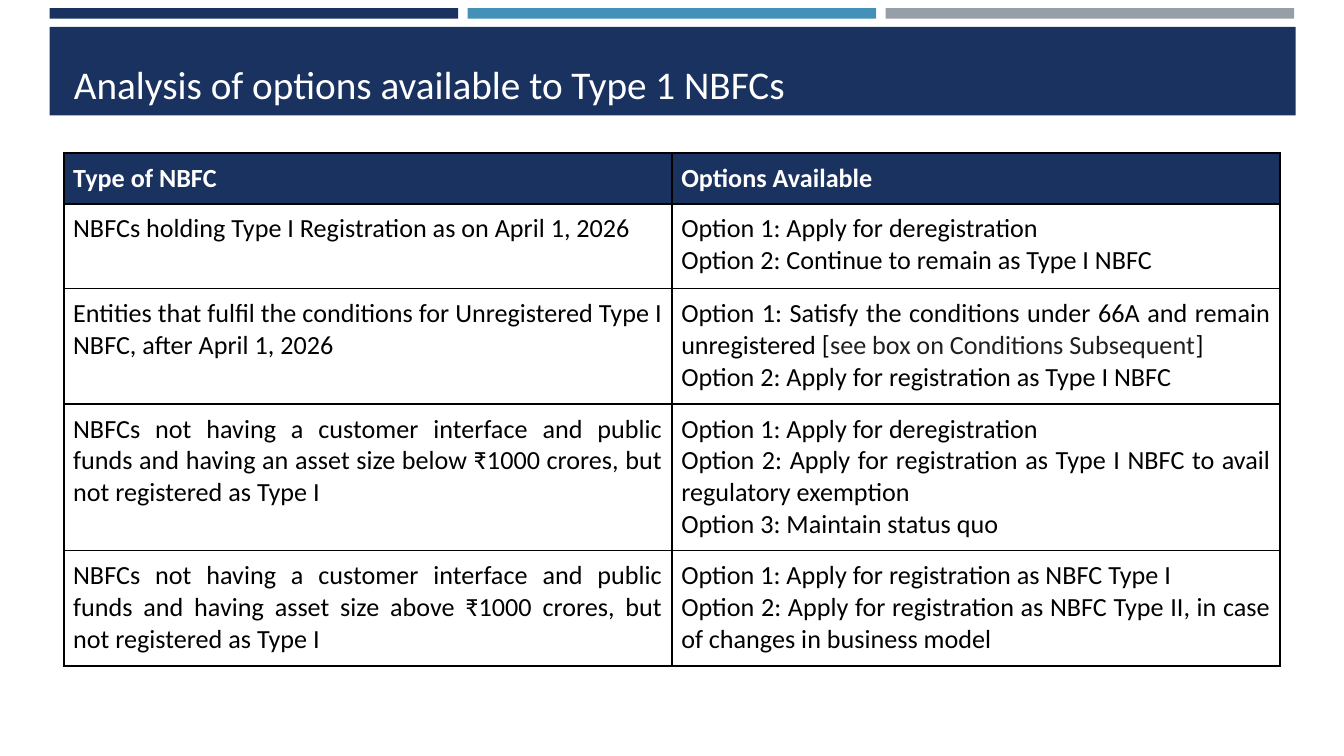
from dataclasses import dataclass

from lxml import etree
from pptx import Presentation
from pptx.dml.color import RGBColor
from pptx.enum.shapes import MSO_SHAPE
from pptx.enum.text import MSO_ANCHOR, PP_ALIGN
from pptx.oxml.ns import qn
from pptx.util import Inches, Pt

RECT = MSO_SHAPE.RECTANGLE
BOTTOM = MSO_ANCHOR.BOTTOM
TOP = MSO_ANCHOR.TOP
JUSTIFY = PP_ALIGN.JUSTIFY
LEFT = PP_ALIGN.LEFT


@dataclass(frozen=True)
class Theme:
    """Colours, font and type sizes of the slide."""
    navy: str = "1A3260"
    blue: str = "4590B8"
    grey: str = "969FA7"
    white: str = "FFFFFF"
    black: str = "000000"
    soft: str = "1F1F1F"
    font: str = "Calibri"
    title: int = 21
    body: int = 14
    border: int = 1
    inset: int = 5


THEME = Theme()
HEADS = ["Type of NBFC", "Options Available"]
ROWS = [
    (["NBFCs holding Type I Registration as on April 1, 2026"],
     ["Option 1: Apply for deregistration",
      "Option 2: Continue to remain as Type I NBFC"]),
    (["Entities that fulfil the conditions for Unregistered Type I NBFC, "
      "after April 1, 2026"],
     [[("Option 1: Satisfy the conditions under 66A and remain unregistered [",
        THEME.black),
       ("see box on Conditions Subsequent", THEME.soft),
       ("]", THEME.black)],
      "Option 2: Apply for registration as Type I NBFC"]),
    (["NBFCs not having a customer interface and public funds and having "
      "an asset size below ₹1000 crores, but not registered as Type I"],
     ["Option 1: Apply for deregistration",
      "Option 2: Apply for registration as Type I NBFC to avail "
      "regulatory exemption",
      "Option 3: Maintain status quo"]),
    (["NBFCs not having a customer interface and public funds and having "
      "asset size above ₹1000 crores, but not registered as Type I"],
     ["Option 1: Apply for registration as NBFC Type I",
      "Option 2: Apply for registration as NBFC Type II, in case of "
      "changes in business model"]),
]
HEIGHTS = [0.2, 0.63, 0.86, 1.09, 0.86]
WIDTH = 9.05


def add_bar(slide, x, y, w, h, color):
    """Draw a plain filled bar."""
    bar = slide.shapes.add_shape(RECT, Inches(x), Inches(y), Inches(w), Inches(h))
    bar.shadow.inherit = False
    bar.fill.solid()
    bar.fill.fore_color.rgb = RGBColor.from_string(color)
    bar.line.fill.background()


def add_run(para, text, size, color, bold=False):
    """Append one styled run to a paragraph."""
    run = para.add_run()
    run.text = text
    run.font.name = THEME.font
    run.font.size = Pt(size)
    run.font.bold = bold
    run.font.color.rgb = RGBColor.from_string(color)


def add_title(slide, text):
    """Place the title over the navy band."""
    box = slide.shapes.add_textbox(Inches(0.48), Inches(0.32), Inches(WIDTH), Inches(0.52))
    frame = box.text_frame
    frame.word_wrap = True
    frame.vertical_anchor = BOTTOM
    frame.margin_left = frame.margin_right = Inches(0.07)
    frame.margin_top = frame.margin_bottom = Inches(0.04)
    frame.paragraphs[0].alignment = LEFT
    add_run(frame.paragraphs[0], text, THEME.title, THEME.white)


def add_edges(cell):
    """Give a cell a thin line on all four sides."""
    props = cell._tc.get_or_add_tcPr()
    for side in ("a:lnL", "a:lnR", "a:lnT", "a:lnB"):
        line = etree.SubElement(props, qn(side), w=str(Pt(THEME.border)))
        fill = etree.SubElement(line, qn("a:solidFill"))
        etree.SubElement(fill, qn("a:srgbClr"), val=THEME.black)


def fill_cell(cell, paras, head=False):
    """Set the edges, fill and justified text of a cell."""
    add_edges(cell)
    if head:
        cell.fill.solid()
        cell.fill.fore_color.rgb = RGBColor.from_string(THEME.navy)
    else:
        cell.fill.background()
    cell.margin_left = cell.margin_right = Pt(THEME.inset)
    cell.margin_top = cell.margin_bottom = Pt(THEME.inset)
    cell.vertical_anchor = TOP
    color = THEME.white if head else THEME.black
    frame = cell.text_frame
    for i, item in enumerate(paras):
        para = frame.add_paragraph() if i else frame.paragraphs[0]
        para.alignment = JUSTIFY
        runs = [(item, color)] if isinstance(item, str) else item
        for text, tint in runs:
            add_run(para, text, THEME.body, tint, head)


def add_grid(slide):
    """Build the table of NBFC types and options."""
    rows = [[[head] for head in HEADS], *ROWS]
    grid = slide.shapes.add_table(
        len(rows), len(HEADS), Inches((10 - WIDTH) / 2), Inches(1.14),
        Inches(WIDTH), Inches(sum(HEIGHTS))).table
    for col in grid.columns:
        col.width = Inches(WIDTH / len(HEADS))
    for r, (row, height) in enumerate(zip(rows, HEIGHTS)):
        grid.rows[r].height = Inches(height)
        for c, paras in enumerate(row):
            fill_cell(grid.cell(r, c), paras, head=r == 0)


def main():
    """Build and save the slide."""
    deck = Presentation()
    deck.slide_width = Inches(10)
    deck.slide_height = Inches(10 * 9 / 16)
    slide = deck.slides.add_slide(deck.slide_layouts[6])
    for i, color in enumerate((THEME.navy, THEME.blue, THEME.grey)):
        add_bar(slide, 0.37 + i * 3.11, 0.06, 3.04, 0.08, color)
    add_bar(slide, 0.37, 0.2, 9.27, 0.66, THEME.navy)
    add_grid(slide)
    add_title(slide, "Analysis of options available to Type 1 NBFCs")
    deck.save("out.pptx")


if __name__ == "__main__":
    main()
